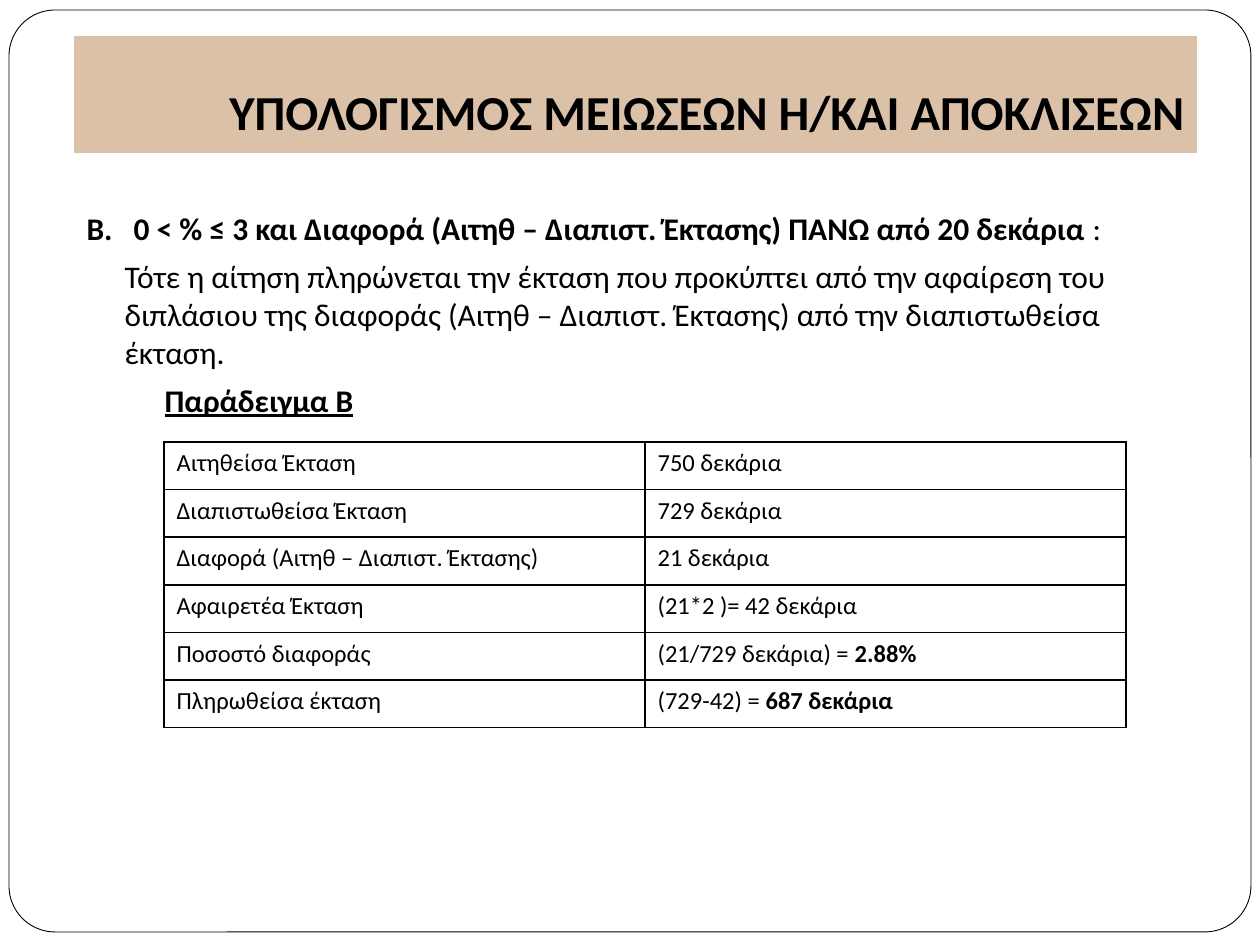
import dataclasses

import lxml.etree
import pptx
import pptx.dml.color
import pptx.enum.shapes
import pptx.enum.text
import pptx.oxml.ns
import pptx.util

SCALE = 914400 / 126


def px(length):
    return pptx.util.Emu(round(length * SCALE))


def color(value):
    return pptx.dml.color.RGBColor.from_string(value)


def child(parent, tag, **attributes):
    return lxml.etree.SubElement(parent, pptx.oxml.ns.qn(tag), attributes)


@dataclasses.dataclass(frozen=True)
class Theme:
    font: str = "Calibri"
    ink: str = "000000"
    paper: str = "FFFFFF"
    band: str = "DBC1A7"
    title_size: float = 27.9
    body_size: float = 18
    table_size: float = 14
    space_before: float = 5.8
    frame_line: float = 0.5
    table_line: float = 1


class SlideBuilder:
    def __init__(self, deck, theme):
        self.theme = theme
        self.page = deck.slides.add_slide(deck.slide_layouts[1])

    def place(self, shape, left, top, width, height):
        values = {"left": left, "top": top, "width": width, "height": height}
        for name, value in values.items():
            setattr(shape, name, px(value))

    def add_spans(self, para, spans, size):
        for text, styles in spans:
            span = para.add_run()
            span.text = text
            values = {"name": self.theme.font, "size": pptx.util.Pt(size), "bold": False, **styles}
            for name, value in values.items():
                setattr(span.font, name, value)
            span.font.color.rgb = color(self.theme.ink)

    def frame(self, left, top, width, height, rounding):
        kind = pptx.enum.shapes.MSO_SHAPE.ROUNDED_RECTANGLE
        shape = self.page.shapes.add_shape(kind, px(left), px(top), px(width), px(height))
        shape.adjustments[0] = rounding
        shape.shadow.inherit = False
        shape.fill.solid()
        shape.fill.fore_color.rgb = color(self.theme.paper)
        shape.line.color.rgb = color(self.theme.ink)
        shape.line.width = pptx.util.Pt(self.theme.frame_line)
        self.page.shapes.title.element.addprevious(shape.element)

    def title(self, text, *area):
        box = self.page.shapes.title
        self.place(box, *area)
        box.fill.solid()
        box.fill.fore_color.rgb = color(self.theme.band)
        values = {
            "vertical_anchor": pptx.enum.text.MSO_ANCHOR.BOTTOM,
            "auto_size": pptx.enum.text.MSO_AUTO_SIZE.NONE,
            "margin_bottom": pptx.util.Inches(0.1),
        }
        for name, value in values.items():
            setattr(box.text_frame, name, value)
        para = box.text_frame.paragraphs[0]
        para.alignment = pptx.enum.text.PP_ALIGN.RIGHT
        self.add_spans(para, [(text, {"bold": True})], self.theme.title_size)

    def body(self, items, *area):
        box = self.page.placeholders[1]
        self.place(box, *area)
        box.text_frame.auto_size = pptx.enum.text.MSO_AUTO_SIZE.NONE
        for index, (margin, indent, spans) in enumerate(items):
            para = box.text_frame.add_paragraph() if index else box.text_frame.paragraphs[0]
            para.space_before = pptx.util.Pt(self.theme.space_before if index else 0)
            settings = para._p.get_or_add_pPr()
            settings.set("marL", str(px(margin)))
            settings.set("indent", str(px(indent)))
            child(settings, "a:buNone")
            self.add_spans(para, spans, self.theme.body_size)

    def table(self, rows, left, top, width, height):
        holder = self.page.shapes.add_table(
            len(rows), len(rows[0]), px(left), px(top), px(width), px(height)
        )
        grid = holder.table
        for name in ("first_row", "horz_banding"):
            setattr(grid, name, False)
        for row_index, row in enumerate(rows):
            for column_index, spans in enumerate(row):
                cell = grid.cell(row_index, column_index)
                self.add_spans(cell.text_frame.paragraphs[0], spans, self.theme.table_size)
                self.borders(cell)
                cell.fill.background()

    def borders(self, cell):
        settings = cell._tc.get_or_add_tcPr()
        width = str(pptx.util.Pt(self.theme.table_line))
        for side in ("a:lnL", "a:lnR", "a:lnT", "a:lnB"):
            line = child(settings, side, w=width)
            child(child(line, "a:solidFill"), "a:srgbClr", val=self.theme.ink)


def main():
    deck = pptx.Presentation()
    deck.slide_width = px(1260)
    deck.slide_height = px(945)
    slide = SlideBuilder(deck, Theme())
    bold = {"bold": True}

    slide.frame(9, 10, 1242, 922, 0.05)
    slide.title("ΥΠΟΛΟΓΙΣΜΟΣ ΜΕΙΩΣΕΩΝ Ή/ΚΑΙ ΑΠΟΚΛΙΣΕΩΝ", 74, 36, 1123, 117)

    condition = "Β.\t0 ˂ % ≤ 3 και Διαφορά (Αιτηθ – Διαπιστ. Έκτασης) ΠΑΝΩ από 20 δεκάρια"
    rule = (
        "Τότε η αίτηση πληρώνεται την έκταση που προκύπτει από την αφαίρεση του "
        "διπλάσιου της διαφοράς (Αιτηθ – Διαπιστ. Έκτασης) από την διαπιστωθείσα έκταση."
    )
    slide.body(
        [
            (47, -47, [(condition, bold), (" :", {})]),
            (38, 0, [(rule, {})]),
            (78, 0, [("Παράδειγμα Β", {"bold": True, "underline": True})]),
        ],
        74, 203, 1123, 458,
    )

    example = [
        ("Αιτηθείσα Έκταση", "750 δεκάρια", ""),
        ("Διαπιστωθείσα Έκταση", "729 δεκάρια", ""),
        ("Διαφορά (Αιτηθ – Διαπιστ. Έκτασης)", "21 δεκάρια", ""),
        ("Αφαιρετέα Έκταση", "(21*2 )= 42 δεκάρια", ""),
        ("Ποσοστό διαφοράς", "(21/729 δεκάρια) = ", "2.88%"),
        ("Πληρωθείσα έκταση", "(729-42) = ", "687 δεκάρια"),
    ]
    rows = [
        ([(label, {})], [(value, {})] + ([(result, bold)] if result else []))
        for label, value, result in example
    ]
    slide.table(rows, 164, 442, 962, 286)

    deck.save("out.pptx")


if __name__ == "__main__":
    main()
